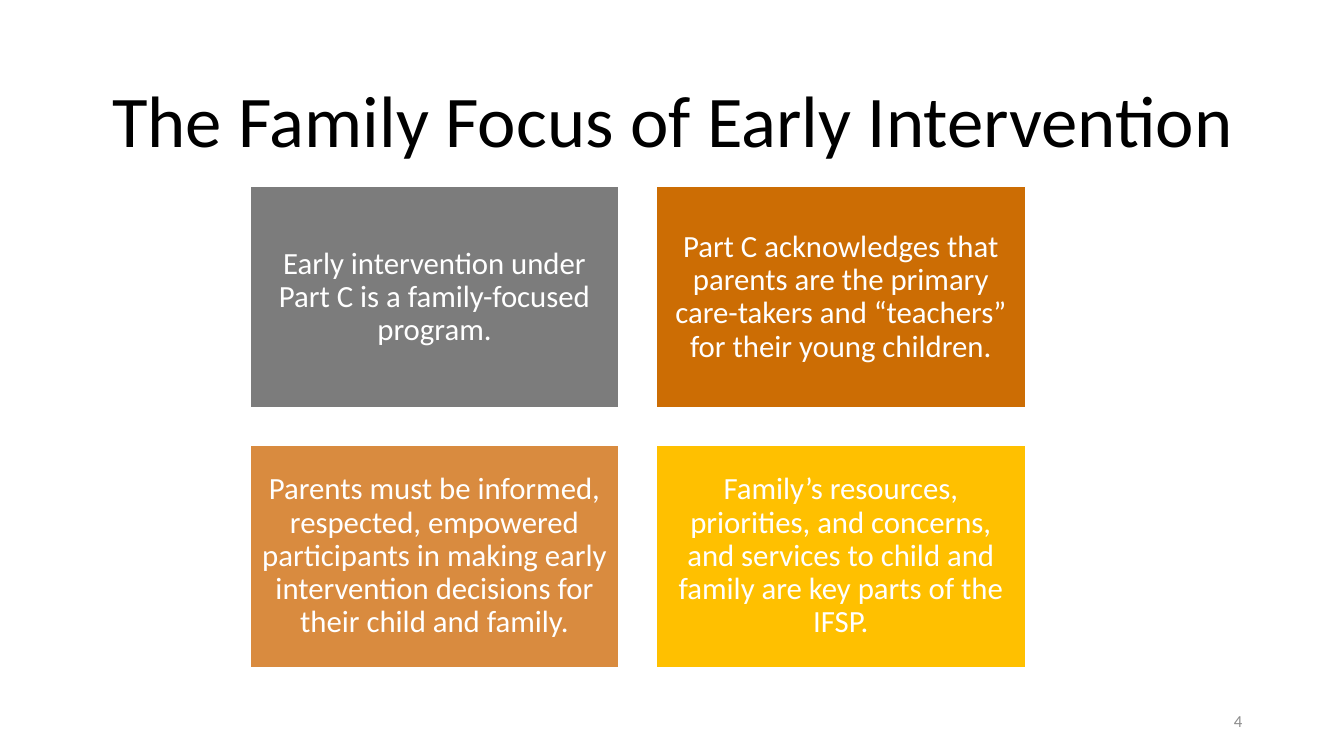
from dataclasses import dataclass

from pptx import Presentation
from pptx.dml.color import RGBColor
from pptx.enum.shapes import MSO_SHAPE
from pptx.enum.text import MSO_ANCHOR, PP_ALIGN
from pptx.slide import Slide
from pptx.text.text import TextFrame
from pptx.util import Inches, Pt

RECT = MSO_SHAPE.RECTANGLE
MIDDLE = MSO_ANCHOR.MIDDLE
CENTER, RIGHT = PP_ALIGN.CENTER, PP_ALIGN.RIGHT

FONT = "Calibri"
COLORS = {
    "black": "000000",
    "white": "FFFFFF",
    "pale": "8C8C8C",
    "gray": "7C7C7C",
    "rust": "CC6D04",
    "orange": "D98B3F",
    "gold": "FFC000",
}

# Grid of cards, in inches
LEFT, TOP = 2.48, 1.85
WIDTH, HEIGHT = 3.66, 2.2
GAP = 0.37
INSET = 0.09


@dataclass
class Card:
    col: int
    row: int
    fill: str
    text: str


@dataclass
class Label:
    left: float
    top: float
    width: float
    height: float
    text: str
    size: int
    color: str
    align: PP_ALIGN
    line: float


CARDS = [
    Card(0, 0, "gray", "Early intervention under Part C is a family-focused program."),
    Card(1, 0, "rust", "Part C acknowledges that parents are the primary care-takers "
         "and “teachers” for their young children."),
    Card(0, 1, "orange", "Parents must be informed, respected, empowered participants "
         "in making early intervention decisions for their child and family."),
    Card(1, 1, "gold", "Family’s resources, priorities, and concerns, and services "
         "to child and family are key parts of the IFSP."),
]

LABELS = [
    Label(0.92, 0.61, 11.5, 1.24, "The Family Focus of Early Intervention",
          52, "black", CENTER, 0.9),
    Label(9.42, 6.95, 3, 0.4, "4", 12, "pale", RIGHT, 1.0),
]


def rgb(name: str) -> RGBColor:
    return RGBColor.from_string(COLORS[name])


def write(frame: TextFrame, text: str, size: int, color: str,
          align: PP_ALIGN, line: float) -> None:
    frame.word_wrap = True
    frame.vertical_anchor = MIDDLE
    para = frame.paragraphs[0]
    para.text = text
    para.alignment = align
    para.line_spacing = line
    para.font.name = FONT
    para.font.size = Pt(size)
    para.font.color.rgb = rgb(color)


def add_label(slide: Slide, label: Label) -> None:
    box = slide.shapes.add_textbox(Inches(label.left), Inches(label.top),
                                   Inches(label.width), Inches(label.height))
    write(box.text_frame, label.text, label.size, label.color,
          label.align, label.line)


def add_card(slide: Slide, card: Card) -> None:
    left = LEFT + card.col * (WIDTH + GAP)
    top = TOP + card.row * (HEIGHT + GAP)
    shape = slide.shapes.add_shape(RECT, Inches(left), Inches(top),
                                   Inches(WIDTH), Inches(HEIGHT))
    shape.shadow.inherit = False
    shape.fill.solid()
    shape.fill.fore_color.rgb = rgb(card.fill)
    shape.line.color.rgb = rgb("white")
    shape.line.width = Pt(1)
    frame = shape.text_frame
    frame.margin_left = frame.margin_right = Inches(INSET)
    frame.margin_top = frame.margin_bottom = Inches(INSET)
    write(frame, card.text, 22, "white", CENTER, 0.9)


def main() -> None:
    deck = Presentation()
    deck.slide_width, deck.slide_height = Inches(13.33), Inches(7.5)
    slide = deck.slides.add_slide(deck.slide_layouts[6])

    # Title and slide number
    for label in LABELS:
        add_label(slide, label)

    # Four key points
    for card in CARDS:
        add_card(slide, card)

    deck.save("out.pptx")


if __name__ == "__main__":
    main()
